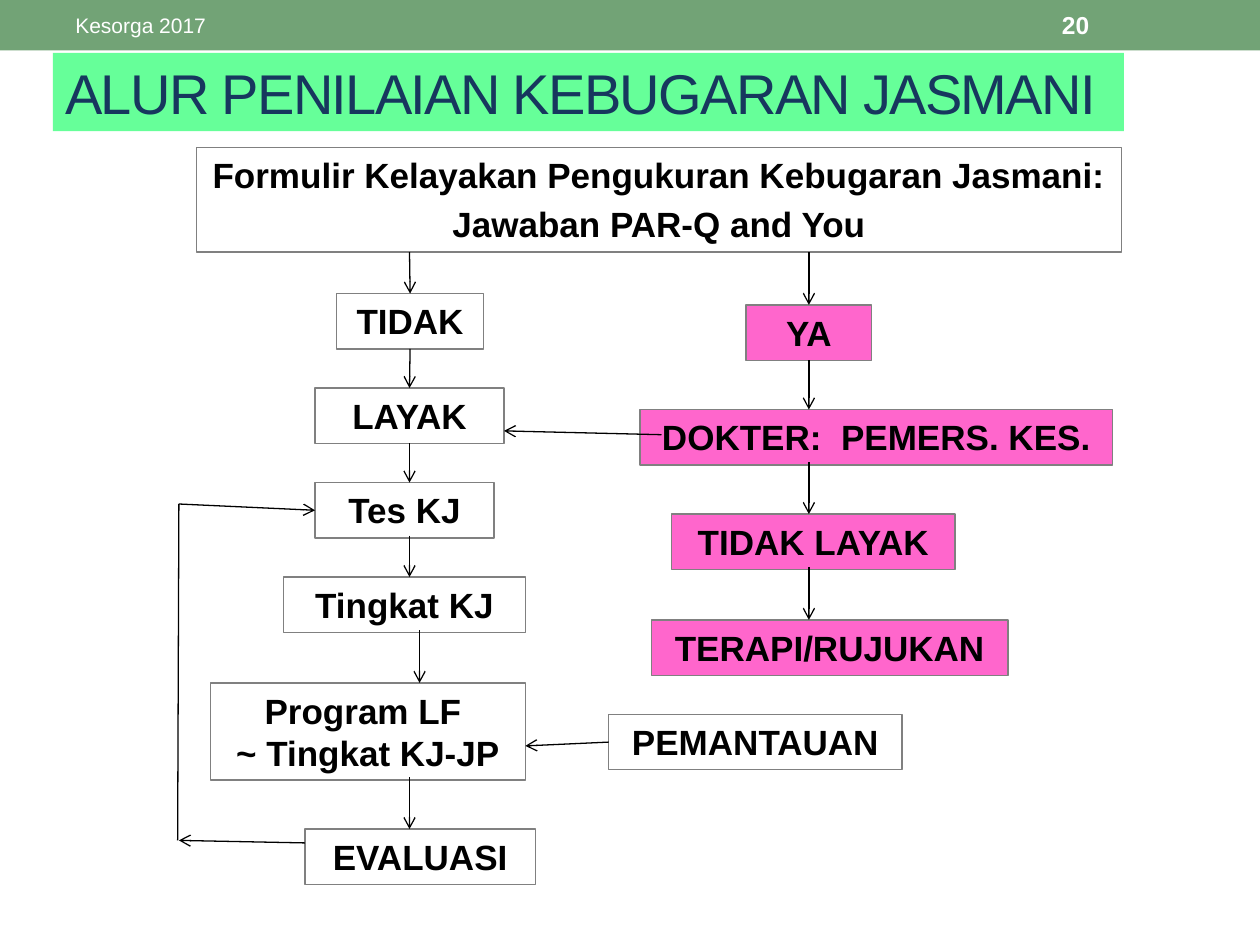
"""Builds the flow chart slide for the physical fitness assessment."""
from dataclasses import dataclass

from lxml.etree import SubElement
from pptx import Presentation
from pptx.dml.color import RGBColor
from pptx.enum.shapes import MSO_CONNECTOR, MSO_SHAPE
from pptx.enum.text import MSO_ANCHOR, PP_ALIGN
from pptx.oxml.ns import qn
from pptx.util import Inches, Pt

TOP, LEFT, BOTTOM = 0, 1, 2


@dataclass(frozen=True)
class Theme:
    font: str = "Arial"
    band: str = "72A376"
    title_fill: str = "66FF99"
    title_text: str = "17375E"
    alert: str = "FF66CC"
    border: str = "808080"
    ink: str = "000000"
    light: str = "FFFFFF"
    title_size: int = 32
    box_size: int = 20
    number_size: int = 14
    footer_size: int = 12
    line_width: float = 0.75


def write_text(shape, text, *, size, color, font, bold=False, align=PP_ALIGN.LEFT,
               anchor=MSO_ANCHOR.MIDDLE, before=0, tracking=0):
    frame = shape.text_frame
    frame.word_wrap = True
    frame.vertical_anchor = anchor
    for index, line in enumerate(text.split("\n")):
        paragraph = frame.add_paragraph() if index else frame.paragraphs[0]
        paragraph.alignment = align
        paragraph.space_before = Pt(before)
        run = paragraph.add_run()
        run.text = line
        run.font.name = font
        run.font.size = Pt(size)
        run.font.bold = bold
        run.font.color.rgb = RGBColor.from_string(color)
        if tracking:
            run.font._element.set("spc", str(tracking * 100))


class SlideBuilder:
    def __init__(self, slide, theme):
        self.slide = slide
        self.theme = theme

    def rectangle(self, place, fill=None, line=None):
        shape = self.slide.shapes.add_shape(MSO_SHAPE.RECTANGLE, *map(Inches, place))
        shape.shadow.inherit = False
        if fill:
            shape.fill.solid()
            shape.fill.fore_color.rgb = RGBColor.from_string(fill)
        else:
            shape.fill.background()
        if line:
            shape.line.color.rgb = RGBColor.from_string(line)
            shape.line.width = Pt(self.theme.line_width)
        else:
            shape.line.fill.background()
        return shape

    def title(self, text, place):
        theme = self.theme
        write_text(self.rectangle(place, theme.title_fill), text, size=theme.title_size,
                   color=theme.title_text, font=theme.font, tracking=-1)

    def label(self, text, place, size, bold=False):
        box = self.slide.shapes.add_textbox(*map(Inches, place))
        write_text(box, text, size=size, color=self.theme.light, font=self.theme.font, bold=bold)

    def step(self, text, place, fill=None, before=0):
        theme = self.theme
        shape = self.rectangle(place, fill, theme.border)
        write_text(shape, text, size=theme.box_size, color=theme.ink, font=theme.font, bold=True,
                   align=PP_ALIGN.CENTER, anchor=MSO_ANCHOR.TOP, before=before)
        return shape

    def line(self, start, end, begin_at=None, end_at=None, arrow=True):
        connector = self.slide.shapes.add_connector(
            MSO_CONNECTOR.STRAIGHT, *map(Inches, (*start, *end)))
        connector.line.color.rgb = RGBColor.from_string(self.theme.ink)
        connector.line.width = Pt(self.theme.line_width)
        if arrow:
            SubElement(connector.line._get_or_add_ln(), qn("a:tailEnd"), type="arrow")
        SubElement(connector._element.spPr, qn("a:effectLst"))
        if begin_at:
            connector.begin_connect(*begin_at)
        if end_at:
            connector.end_connect(*end_at)


def main():
    presentation = Presentation()
    presentation.slide_width, presentation.slide_height = Inches(10), Inches(7.5)
    slide = presentation.slides.add_slide(presentation.slide_layouts[6])
    theme = Theme()
    builder = SlideBuilder(slide, theme)

    builder.rectangle((0, 0, 10, 0.4), theme.band)
    builder.title("ALUR PENILAIAN KEBUGARAN JASMANI", (0.42, 0.42, 8.5, 0.62))
    builder.label("Kesorga 2017", (0.5, 0.02, 3.17, 0.36), theme.footer_size)
    builder.label("20", (8.33, 0.02, 1.17, 0.36), theme.number_size, bold=True)
    builder.step("Formulir Kelayakan Pengukuran Kebugaran Jasmani:\nJawaban PAR-Q and You",
                 (1.56, 1.17, 7.34, 0.83), before=4)

    row = 0.44
    steps = [
        ("TIDAK", 2.67, 2.33, 1.17, row, None),
        ("LAYAK", 2.5, 3.08, 1.5, row, None),
        ("Tes KJ", 2.5, 3.83, 1.42, row, None),
        ("Tingkat KJ", 2.25, 4.58, 1.92, row, None),
        ("Program LF \n~ Tingkat KJ-JP", 1.67, 5.42, 2.5, 0.77, None),
        ("EVALUASI", 2.42, 6.58, 1.83, row, None),
        ("PEMANTAUAN", 4.83, 5.67, 2.33, row, None),
        ("YA", 5.92, 2.42, 1, row, theme.alert),
        ("DOKTER:  PEMERS. KES.", 5.08, 3.25, 3.75, row, theme.alert),
        ("TIDAK LAYAK", 5.33, 4.08, 2.25, row, theme.alert),
        ("TERAPI/RUJUKAN", 5.17, 4.92, 2.83, row, theme.alert),
    ]
    boxes = {text: builder.step(text, place, fill) for text, *place, fill in steps}
    fit, eligible, test, yes = (boxes[name] for name in ("TIDAK", "LAYAK", "Tes KJ", "YA"))

    left_x, right_x = 3.25, 6.42
    downward = [
        (left_x, 2, 2.33, None, (fit, TOP)),
        (left_x, 2.75, 3.08, (fit, BOTTOM), (eligible, TOP)),
        (left_x, 3.5, 3.83, (eligible, BOTTOM), None),
        (left_x, 4.25, 4.58, None, None),
        (3.33, 5, 5.42, None, None),
        (left_x, 6.17, 6.58, None, None),
        (right_x, 2, 2.42, None, (yes, TOP)),
        (right_x, 2.83, 3.25, (yes, BOTTOM), None),
        (right_x, 3.67, 4.08, None, None),
        (right_x, 4.5, 4.92, None, None),
    ]
    for x, top, bottom, begin_at, end_at in downward:
        builder.line((x, top), (x, bottom), begin_at, end_at)

    builder.line((5.25, 3.45), (4, 3.42))
    builder.line((4.83, 5.91), (4.17, 5.92), begin_at=(boxes["PEMANTAUAN"], LEFT))
    builder.line((2.42, 6.69), (1.42, 6.67))
    builder.line((1.42, 4), (1.41, 6.67), arrow=False)
    builder.line((1.42, 4), (2.5, 4.05), end_at=(test, LEFT))

    presentation.save("out.pptx")


if __name__ == "__main__":
    main()
